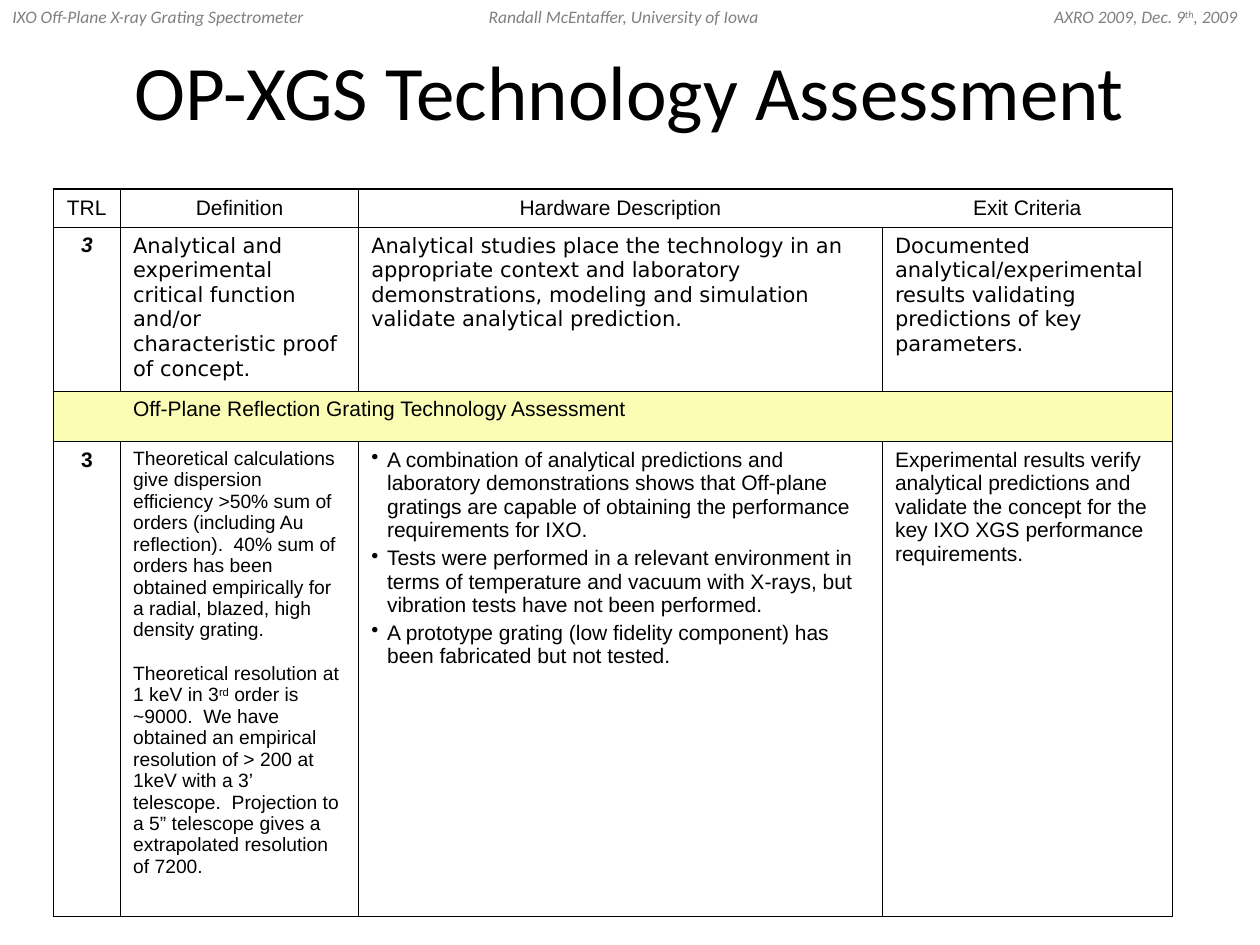
from dataclasses import dataclass

from lxml import etree
from pptx import Presentation
from pptx import util as u
from pptx.dml.color import RGBColor
from pptx.enum import text
from pptx.oxml.ns import qn


@dataclass(frozen=True)
class Theme:
    """Colours, fonts and type sizes of the slide."""
    ink: str = "000000"
    muted: str = "808080"
    band: str = "FBFDB5"
    heading_face: str = "Calibri"
    body_face: str = "Arial"
    definition_face: str = "DejaVu Sans"
    title: float = 44
    body: float = 12
    dense: float = 11
    running: float = 10
    rule: float = 0.75
    heavy_rule: float = 1


@dataclass(frozen=True)
class Entry:
    """Wording and style of one table cell; ^ marks enclose superscripts."""
    paragraphs: tuple
    face: str = Theme.body_face
    size: float = Theme.body
    bold: bool = False
    italic: bool = False
    centred: bool = False
    middle: bool = False
    bulleted: bool = False
    gap: float = 0


@dataclass(frozen=True)
class Row:
    """Height, entries by column, merged columns and visible vertical rules."""
    height: float
    entries: dict
    merged: tuple
    dividers: tuple
    fill: str = ""


def heading(label):
    """Return a centred column heading."""
    return Entry((label,), centred=True, middle=True)


def level(number, italic=False):
    """Return a technology readiness level."""
    return Entry((number,), bold=True, italic=italic, centred=True)


def definition(wording):
    """Return a cell of the general level definition."""
    return Entry((wording,), face=Theme.definition_face)


COLUMNS = (1.36, 4.8, 7.16, 3.4, 5.84)
HEAVY_DIVIDER = 4
ROWS = (
    Row(0.77, {0: heading("TRL"), 1: heading("Definition"),
               2: heading("Hardware Description"), 4: heading("Exit Criteria")},
        (2, 3), (0, 1, 2, 5)),
    Row(3.31, {
        0: level("3", italic=True),
        1: definition("Analytical and experimental critical function and/or "
                      "characteristic proof of concept."),
        2: definition("Analytical studies place the technology in an appropriate context "
                      "and laboratory demonstrations, modeling and simulation validate "
                      "analytical prediction."),
        4: definition("Documented analytical/experimental results validating "
                      "predictions of key parameters."),
    }, (2, 3), (0, 1, 2, 4, 5)),
    Row(0.77, {1: Entry(("Off-Plane Reflection Grating Technology Assessment",))},
        (1, 2), (0, 5), Theme.band),
    Row(9.57, {
        0: level("3"),
        1: Entry((
            "Theoretical calculations give dispersion efficiency >50% sum of orders "
            "(including Au reflection).  40% sum of orders has been obtained empirically "
            "for a radial, blazed, high density grating.",
            "Theoretical resolution at 1 keV in 3^rd^ order is ~9000.  We have obtained an "
            "empirical resolution of > 200 at 1keV with a 3’ telescope.  Projection to a "
            "5” telescope gives a extrapolated resolution of 7200.",
        ), size=Theme.dense, gap=12.65),
        2: Entry((
            "A combination of analytical predictions and laboratory demonstrations shows "
            "that Off-plane gratings are capable of obtaining the performance requirements "
            "for IXO.",
            "Tests were performed in a relevant environment in terms of temperature and "
            "vacuum with X-rays, but vibration tests have not been performed.",
            "A prototype grating (low fidelity component) has been fabricated but not tested.",
        ), bulleted=True, gap=2.4),
        4: Entry(("Experimental results verify analytical predictions and validate the "
                  "concept for the key IXO XGS performance requirements.",)),
    }, (2, 3), (0, 1, 2, 4, 5)),
)


def write(paragraph, wording, face, size, colour=Theme.ink, bold=False, italic=False):
    """Add the wording as formatted runs, raising the parts between ^ marks."""
    for order, part in enumerate(wording.split("^")):
        run = paragraph.add_run()
        run.text = part
        run.font.name, run.font.size = face, u.Pt(size)
        run.font.bold, run.font.italic = bold, italic
        run.font.color.rgb = RGBColor.from_string(colour)
        if order % 2:
            run._r.get_or_add_rPr().set("baseline", "30000")


def add_box(slide, left, top, width, height):
    """Return the text frame of a wrapping text box."""
    frame = slide.shapes.add_textbox(*map(u.Cm, (left, top, width, height))).text_frame
    frame.word_wrap = True
    return frame


def add_running_head(slide, left, top, width, height):
    """Place the project, speaker and meeting on one tabbed line."""
    paragraph = add_box(slide, left, top, width, height).paragraphs[0]
    tabs = etree.SubElement(paragraph._p.get_or_add_pPr(), qn("a:tabLst"))
    for position, alignment in ((width / 2 - 0.38, "ctr"), (width - 0.71, "r")):
        etree.SubElement(tabs, qn("a:tab"), pos=str(u.Cm(position)), algn=alignment)
    write(paragraph, "IXO Off-Plane X-ray Grating Spectrometer\t"
          "Randall McEntaffer, University of Iowa\tAXRO 2009, Dec. 9^th^, 2009",
          Theme.heading_face, Theme.running, Theme.muted, italic=True)


def add_title(slide, left, top, width, height):
    """Place the centred slide title."""
    paragraph = add_box(slide, left, top, width, height).paragraphs[0]
    paragraph.alignment = text.PP_ALIGN.CENTER
    write(paragraph, "OP-XGS Technology Assessment", Theme.heading_face, Theme.title)


def draw_borders(cell, left, right):
    """Rule the cell above and below, and at its sides with the given widths."""
    properties = cell._tc.get_or_add_tcPr()
    sides = (("a:lnL", left), ("a:lnR", right), ("a:lnT", Theme.rule), ("a:lnB", Theme.rule))
    for tag, width in sides:
        line = etree.SubElement(properties, qn(tag), w=str(u.Pt(width)))
        if width:
            paint = etree.SubElement(line, qn("a:solidFill"))
            etree.SubElement(paint, qn("a:srgbClr"), val=Theme.ink)
        else:
            etree.SubElement(line, qn("a:noFill"))


def fill_entry(cell, entry):
    """Write an entry's paragraphs into its cell."""
    cell.vertical_anchor = text.MSO_ANCHOR.MIDDLE if entry.middle else text.MSO_ANCHOR.TOP
    frame = cell.text_frame
    for order, wording in enumerate(entry.paragraphs):
        paragraph = frame.add_paragraph() if order else frame.paragraphs[0]
        if entry.bulleted:
            properties = paragraph._p.get_or_add_pPr()
            properties.set("marL", str(u.Cm(0.32)))
            properties.set("indent", str(-u.Cm(0.32)))
            etree.SubElement(properties, qn("a:buChar"), char="•")
        if order:
            paragraph.space_before = u.Pt(entry.gap)
        paragraph.alignment = text.PP_ALIGN.CENTER if entry.centred else text.PP_ALIGN.LEFT
        write(paragraph, wording, entry.face, entry.size, bold=entry.bold, italic=entry.italic)


def add_assessment(slide, left, top, width, height):
    """Place the readiness table, scaling its grid to the given box."""
    table = slide.shapes.add_table(len(ROWS), len(COLUMNS),
                                   *map(u.Cm, (left, top, width, height))).table
    table.first_row = table.horz_banding = False
    for column, share in zip(table.columns, COLUMNS):
        column.width = u.Cm(share * width / sum(COLUMNS))
    total = sum(row.height for row in ROWS)
    for number, row in enumerate(ROWS):
        table.rows[number].height = u.Cm(row.height * height / total)
        first, last = row.merged
        table.cell(number, first).merge(table.cell(number, last))
        rules = {edge: Theme.heavy_rule if edge == HEAVY_DIVIDER else Theme.rule
                 for edge in row.dividers}
        for place in range(len(COLUMNS)):
            cell = table.cell(number, place)
            end = last + 1 if place == first else place + 1
            draw_borders(cell, rules.get(place, 0), rules.get(end, 0))
            if row.fill:
                cell.fill.solid()
                cell.fill.fore_color.rgb = RGBColor.from_string(row.fill)
            else:
                cell.fill.background()
            if place in row.entries:
                fill_entry(cell, row.entries[place])


def main():
    """Build and save the slide."""
    deck = Presentation()
    deck.slide_width, deck.slide_height = u.Cm(25.4), u.Cm(19.05)
    slide = deck.slides.add_slide(deck.slide_layouts[6])
    add_running_head(slide, 0, 0, 25.4, 0.69)
    add_title(slide, 1.27, 0.76, 22.86, 3.18)
    add_assessment(slide, 1.07, 3.81, 22.56, 14.42)
    deck.save("out.pptx")


if __name__ == "__main__":
    main()
